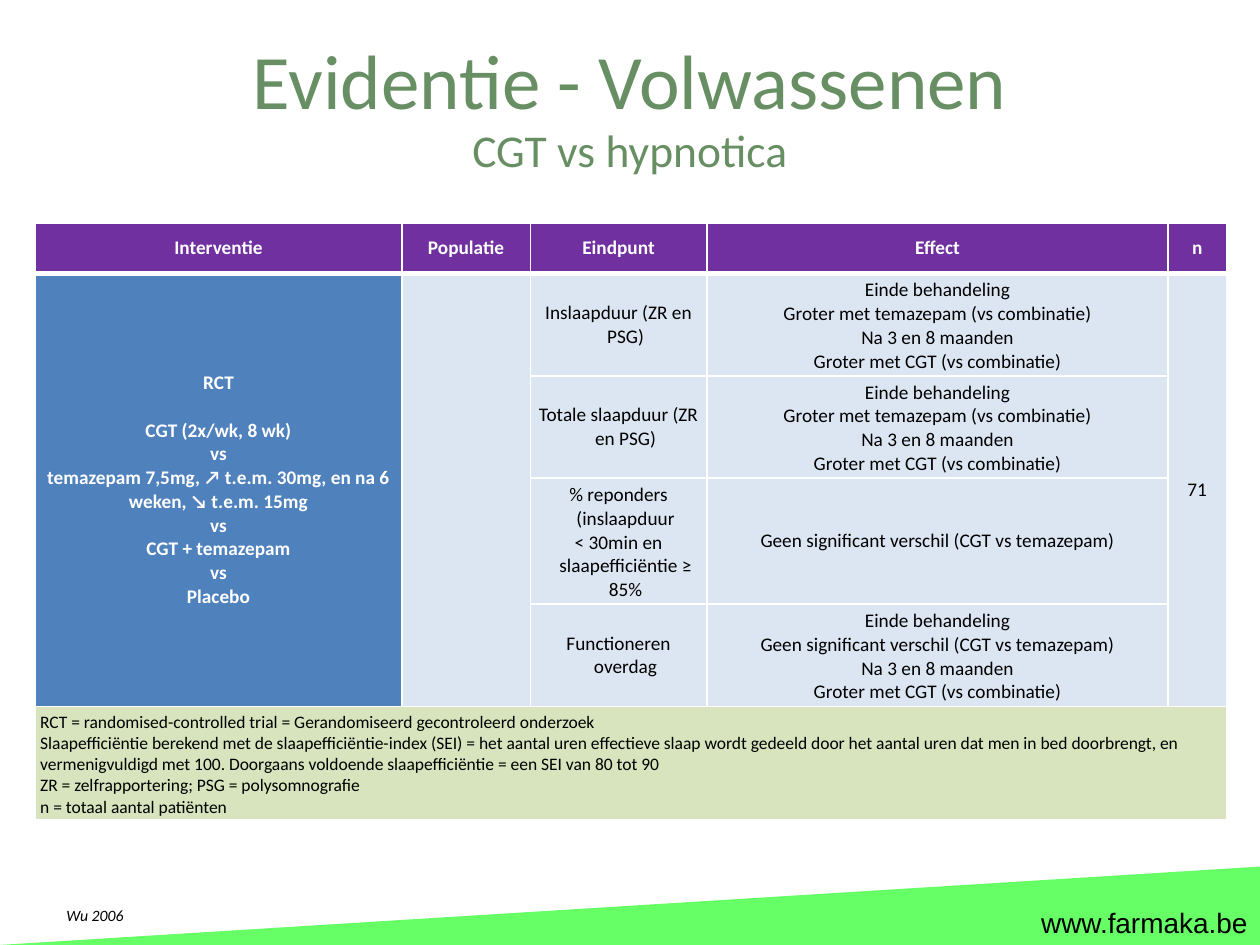
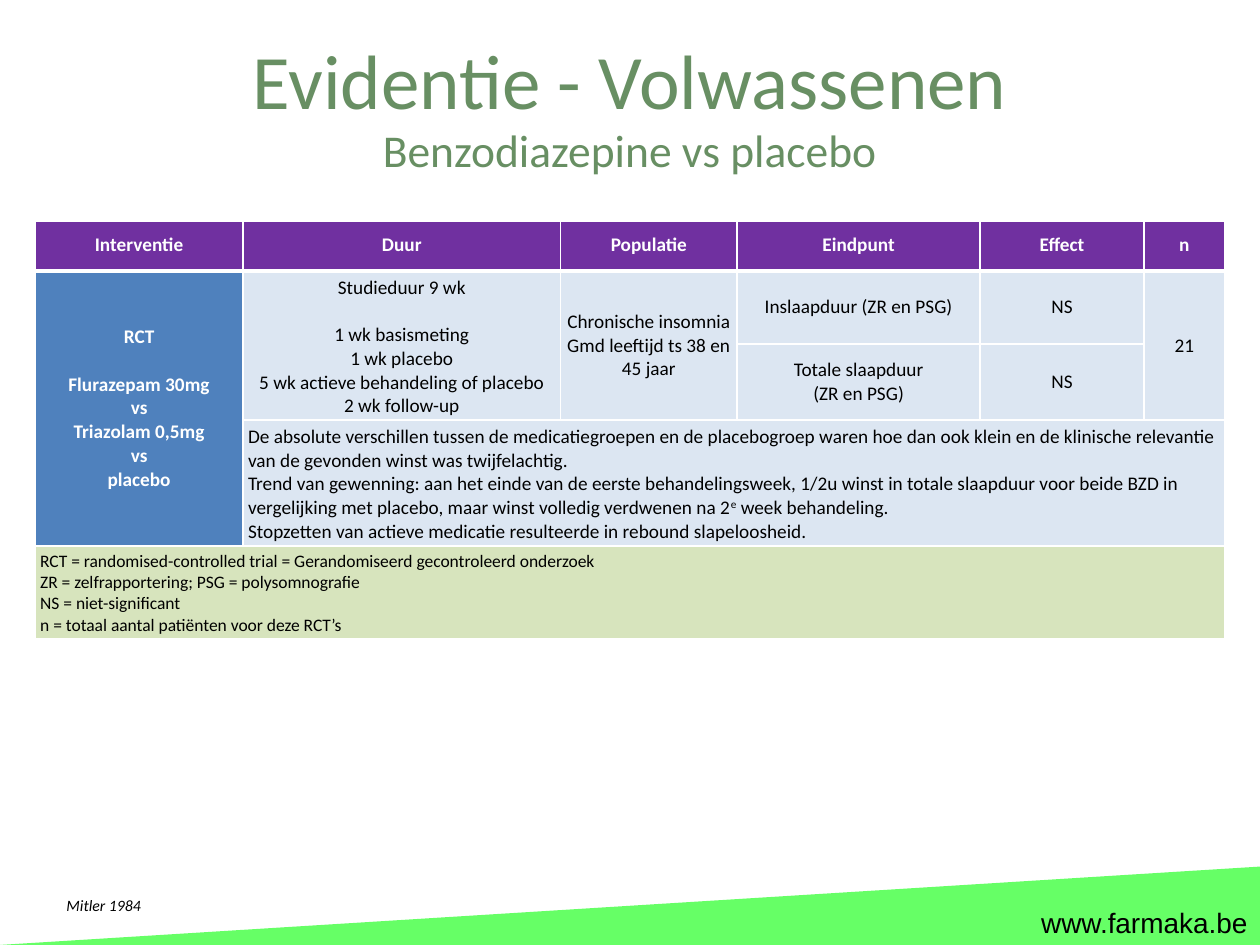
from lxml import etree
from pptx import Presentation
from pptx.dml.color import RGBColor
from pptx.enum import shapes, text
from pptx.oxml.ns import qn
from pptx.util import Cm, Pt

SAGE = RGBColor(0x68, 0x8F, 0x63)
LIME = RGBColor(0x66, 0xFF, 0x66)
PURPLE = RGBColor(0x70, 0x30, 0xA0)
BLUE = RGBColor(0x4F, 0x81, 0xBD)
PALE_BLUE = RGBColor(0xDC, 0xE6, 0xF2)
PALE_GREEN = RGBColor(0xD7, 0xE4, 0xBD)
WHITE = RGBColor(0xFF, 0xFF, 0xFF)
BLACK = RGBColor(0, 0, 0)

CENTER, LEFT, RIGHT = (text.PP_ALIGN.CENTER, text.PP_ALIGN.LEFT,
                       text.PP_ALIGN.RIGHT)
TABLE_LEFT = 0.71
CELL_MARGIN = Cm(0.1)
HANGING = Cm(0.28)
# Lines that stand apart from the lines below them
LEAD_LINES = ("RCT", "Studieduur 9 wk")

RCT_NOTE = "RCT = randomised-controlled trial = Gerandomiseerd gecontroleerd onderzoek"
ZR_NOTE = "ZR = zelfrapportering; PSG = polysomnografie"
SHIFTING_EFFECT = (
    "Einde behandeling\nGroter met temazepam (vs combinatie)\n"
    "Na 3 en 8 maanden\nGroter met CGT (vs combinatie)")
NO_DIFFERENCE = "Geen significant verschil (CGT vs temazepam)"

# Cells are keyed by (row, column); spans give first and last cell.
# Text between ^ marks is superscript.
studies = [
    {
        "subtitle": "CGT vs hypnotica",
        "citation": "Wu 2006",
        "citation_top": 18.14,
        "table_top": 4.47,
        "headers": ["Interventie", "Populatie", "Eindpunt", "Effect", "n"],
        "widths": [7.39, 2.59, 3.56, 9.3, 1.17],
        "heights": [1.04, 2.06, 2.06, 2.54, 2.06, 2.29],
        "spans": [(1, 0, 4, 0), (1, 1, 4, 1), (1, 4, 4, 4), (5, 0, 5, 4)],
        "cells": {
            (1, 0): "RCT\nCGT (2x/wk, 8 wk)\nvs\n"
                    "temazepam 7,5mg, ↗ t.e.m. 30mg, en na 6 weken, "
                    "↘ t.e.m. 15mg\nvs\nCGT + temazepam\nvs\nPlacebo",
            (1, 2): "Inslaapduur (ZR en PSG)",
            (1, 3): SHIFTING_EFFECT,
            (1, 4): "71",
            (2, 2): "Totale slaapduur (ZR en PSG)",
            (2, 3): SHIFTING_EFFECT,
            (3, 2): "% reponders (inslaapduur\n"
                    "< 30min en slaapefficiëntie ≥ 85%",
            (3, 3): NO_DIFFERENCE,
            (4, 2): "Functioneren overdag",
            (4, 3): f"Einde behandeling\n{NO_DIFFERENCE}\n"
                    "Na 3 en 8 maanden\nGroter met CGT (vs combinatie)",
            (5, 0): f"{RCT_NOTE}\n"
                    "Slaapefficiëntie berekend met de slaapefficiëntie-index "
                    "(SEI) = het aantal uren effectieve slaap wordt gedeeld "
                    "door het aantal uren dat men in bed doorbrengt, en "
                    "vermenigvuldigd met 100. Doorgaans voldoende "
                    "slaapefficiëntie = een SEI van 80 tot 90\n"
                    f"{ZR_NOTE}\nn = totaal aantal patiënten",
        },
    },
    {
        "subtitle": "Benzodiazepine vs placebo",
        "citation": "Mitler 1984",
        "citation_top": 17.93,
        "table_top": 4.42,
        "headers": ["Interventie", "Duur", "Populatie", "Eindpunt", "Effect", "n"],
        "widths": [4.19, 6.4, 3.56, 4.9, 3.3, 1.63],
        "heights": [1.04, 1.47, 1.52, 2.54, 1.85],
        "spans": [(1, 0, 3, 0), (1, 1, 2, 1), (1, 2, 2, 2), (1, 5, 2, 5),
                  (3, 1, 3, 5), (4, 0, 4, 5)],
        "cells": {
            (1, 0): "RCT\nFlurazepam 30mg\nvs\nTriazolam 0,5mg\nvs\nplacebo",
            (1, 1): "Studieduur 9 wk\n1 wk basismeting\n1 wk placebo\n"
                    "5 wk actieve behandeling of placebo\n2 wk follow-up",
            (1, 2): "Chronische insomnia\nGmd leeftijd ts 38 en 45 jaar",
            (1, 3): "Inslaapduur (ZR en PSG)",
            (1, 4): "NS",
            (1, 5): "21",
            (2, 3): "Totale slaapduur\n(ZR en PSG)",
            (2, 4): "NS",
            (3, 1): "De absolute verschillen tussen de medicatiegroepen en de "
                    "placebogroep waren hoe dan ook klein en de klinische "
                    "relevantie van de gevonden winst was twijfelachtig.\n"
                    "Trend van gewenning: aan het einde van de eerste "
                    "behandelingsweek, 1/2u winst in totale slaapduur voor "
                    "beide BZD in vergelijking met placebo, maar winst volledig "
                    "verdwenen na 2^e^ week behandeling.\n"
                    "Stopzetten van actieve medicatie resulteerde in rebound "
                    "slapeloosheid.",
            (4, 0): f"{RCT_NOTE}\n{ZR_NOTE}\nNS = niet-significant\n"
                    "n = totaal aantal patiënten voor deze RCT’s",
        },
    },
]


def write(frame, content, size, color, align, font="Calibri", bold=False,
          italic=False, hanging=False):
    """Fill a text frame, one paragraph a line, and format every run."""
    frame.word_wrap = True
    frame.text = content
    previous = None
    for paragraph in frame.paragraphs:
        line = paragraph.text
        if "^" in line:
            paragraph.clear()
            for i, piece in enumerate(line.split("^")):
                run = paragraph.add_run()
                run.text = piece
                if i % 2:
                    run._r.get_or_add_rPr().set("baseline", "30000")
        paragraph.alignment = align
        if previous in LEAD_LINES:
            paragraph.space_before = Pt(size * 1.22)
        if hanging:
            properties = paragraph._p.get_or_add_pPr()
            properties.set("marL", str(HANGING))
            properties.set("indent", str(-HANGING))
        for run in paragraph.runs:
            run.font.size = Pt(size)
            run.font.name = font
            run.font.color.rgb = color
            run.font.bold = bold
            run.font.italic = italic
        previous = line


def add_borders(cell, top, bottom):
    """White borders; top and bottom widths in points, sides 1 point."""
    properties = cell._tc.get_or_add_tcPr()
    for side, width in (("L", 1), ("R", 1), ("T", top), ("B", bottom)):
        line = etree.SubElement(properties, qn(f"a:ln{side}"), w=str(Pt(width)))
        fill = etree.SubElement(line, qn("a:solidFill"))
        etree.SubElement(fill, qn("a:srgbClr"), val=str(WHITE))


prs = Presentation()
prs.slide_width = Cm(25.4)
prs.slide_height = Cm(19.05)

for study in studies:
    slide = prs.slides.add_slide(prs.slide_layouts[5])

    # Footer band with web address
    band = slide.shapes.add_shape(shapes.MSO_SHAPE.RIGHT_TRIANGLE,
                                  0, Cm(17.47), prs.slide_width, Cm(1.58))
    band._element.spPr.xfrm.set("flipH", "1")
    band.shadow.inherit = False
    band.fill.solid()
    band.fill.fore_color.rgb = LIME
    band.line.fill.background()
    website = slide.shapes.add_textbox(Cm(20.24), Cm(18.14), Cm(5.16), Cm(0.91))
    write(website.text_frame, "www.farmaka.be", 16, BLACK, RIGHT, font="Arial")

    # Title, subtitle and citation
    title = slide.shapes.title
    title.left, title.top = 0, 0
    title.width, title.height = prs.slide_width, Cm(3.18)
    title.text_frame.vertical_anchor = text.MSO_ANCHOR.MIDDLE
    write(title.text_frame, "Evidentie - Volwassenen", 44, SAGE, CENTER)
    subtitle = slide.shapes.add_textbox(0, Cm(2.34), prs.slide_width, Cm(1.37))
    write(subtitle.text_frame, study["subtitle"], 26, SAGE, CENTER)
    citation = slide.shapes.add_textbox(Cm(1.09), Cm(study["citation_top"]),
                                        Cm(17.15), Cm(0.64))
    write(citation.text_frame, study["citation"], 9, BLACK, LEFT, italic=True)

    # Evidence table
    headers, widths, heights = study["headers"], study["widths"], study["heights"]
    evidence = slide.shapes.add_table(
        len(heights), len(widths), Cm(TABLE_LEFT), Cm(study["table_top"]),
        Cm(sum(widths)), Cm(sum(heights))).table
    for column, width in zip(evidence.columns, widths):
        column.width = Cm(width)
    for row, height in zip(evidence.rows, heights):
        row.height = Cm(height)
    for top, left, bottom, right in study["spans"]:
        evidence.cell(top, left).merge(evidence.cell(bottom, right))

    last = len(heights) - 1
    for r in range(len(heights)):
        for c, header in enumerate(headers):
            cell = evidence.cell(r, c)
            add_borders(cell, 3 if r < 2 else 1, 3 if r in (0, last) else 1)
            cell.fill.solid()
            cell.fill.fore_color.rgb = (
                PURPLE if r == 0 else PALE_GREEN if r == last
                else BLUE if c == 0 else PALE_BLUE)
            cell.vertical_anchor = text.MSO_ANCHOR.MIDDLE
            cell.margin_left = cell.margin_right = CELL_MARGIN
            cell.margin_top = cell.margin_bottom = CELL_MARGIN
            content = header if r == 0 else study["cells"].get((r, c))
            if content is None:
                continue
            strong = r == 0 or (c == 0 and r < last)
            prose = r == last or (cell.is_merge_origin and cell.span_width > 1)
            write(cell.text_frame, content, 10 if r == last else 11,
                  WHITE if strong else BLACK, LEFT if prose else CENTER,
                  bold=strong, hanging=r > 0 and header == "Eindpunt")

prs.save("out.pptx")
